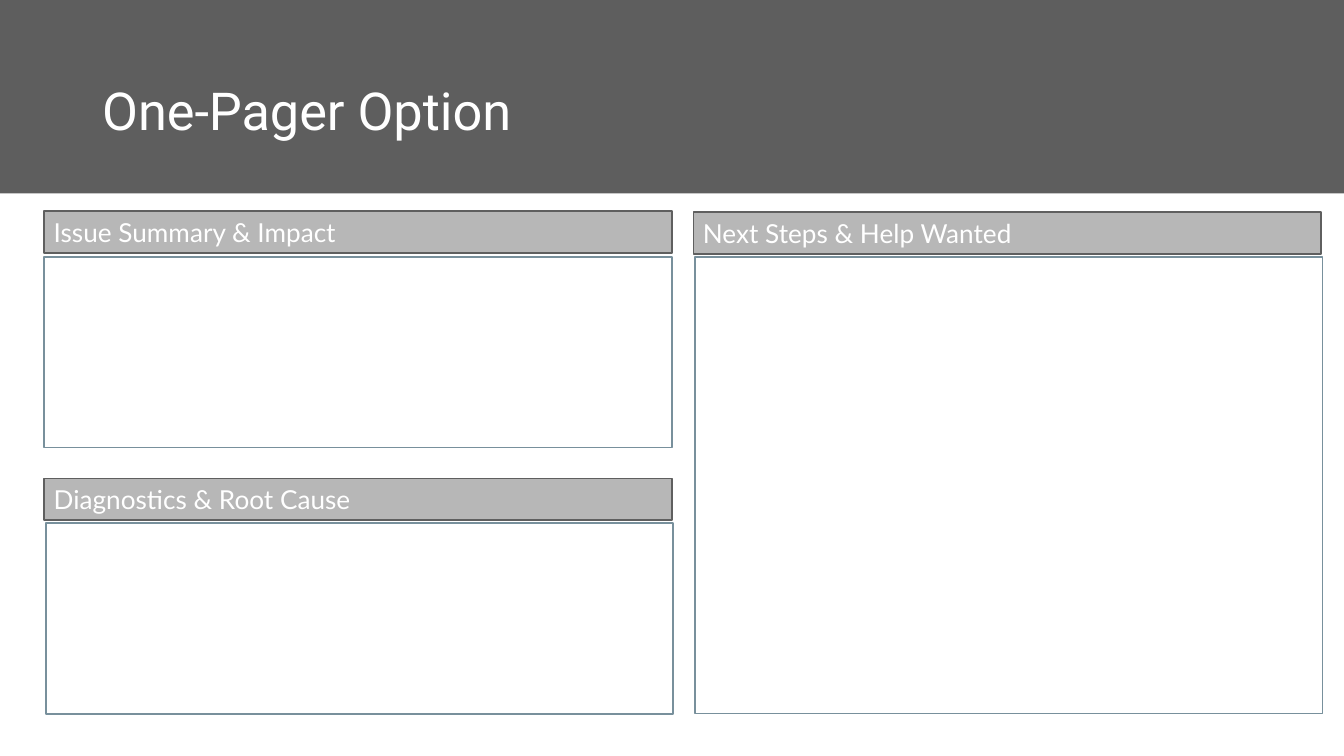
from dataclasses import dataclass

from pptx import Presentation
from pptx.dml.color import RGBColor
from pptx.enum.shapes import MSO_SHAPE
from pptx.enum.text import MSO_ANCHOR, PP_ALIGN
from pptx.util import Inches, Pt

RECT = MSO_SHAPE.RECTANGLE
ROUND_RECT = MSO_SHAPE.ROUNDED_RECTANGLE
MIDDLE = MSO_ANCHOR.MIDDLE
LEFT = PP_ALIGN.LEFT

WIDTH = 10
HEIGHT = WIDTH * 9 / 16
COLUMN_X = (0.33, 5.16)
HEADING_Y = (1.57, 3.56)
BODY_Y = (1.91, 3.89)
PANEL_W = 4.67
HEADING_H = 0.31
BODY_H = 1.42
WHITE = "FFFFFF"


@dataclass(frozen=True)
class Panel:
    heading: str
    column: int
    row: int
    rows: int = 1
    heading_dy: float = 0
    body_dx: float = 0


PANELS = (
    Panel("Issue Summary & Impact", 0, 0),
    Panel("Diagnostics & Root Cause", 0, 1, body_dx=0.01),
    Panel("Next Steps & Help Wanted", 1, 0, rows=2, heading_dy=0.01, body_dx=0.01),
)


def rgb(value: str) -> RGBColor:
    return RGBColor.from_string(value)


def add_box(s, kind, x: float, y: float, w: float, h: float, fill: str, line: str = ""):
    sp = s.shapes.add_shape(kind, Inches(x), Inches(y), Inches(w), Inches(h))
    sp.shadow.inherit = False
    sp.fill.solid()
    sp.fill.fore_color.rgb = rgb(fill)
    if line:
        sp.line.color.rgb = rgb(line)
        sp.line.width = Pt(1)
    else:
        sp.line.fill.background()
    return sp


def write(sp, text: str, *, font: str, size: float, color: str = WHITE, spacing: float = 1):
    tf = sp.text_frame
    tf.word_wrap = True
    tf.vertical_anchor = MIDDLE
    tf.margin_left = tf.margin_right = Inches(0.07)
    tf.margin_top = tf.margin_bottom = Inches(0.04)
    p = tf.paragraphs[0]
    p.alignment = LEFT
    p.line_spacing = spacing
    r = p.add_run()
    r.text = text
    r.font.name = font
    r.font.size = Pt(size)
    r.font.color.rgb = rgb(color)


def add_panel(s, panel: Panel) -> None:
    x = COLUMN_X[panel.column]
    heading = add_box(s, RECT, x, HEADING_Y[panel.row] + panel.heading_dy,
                      PANEL_W, HEADING_H, "B7B7B7", "5F5F5F")
    write(heading, panel.heading, font="Lato", size=14)
    last_row = panel.row + panel.rows - 1
    height = BODY_Y[last_row] + BODY_H - BODY_Y[panel.row]
    body = add_box(s, ROUND_RECT, x + panel.body_dx, BODY_Y[panel.row],
                   PANEL_W, height, WHITE, "78909C")
    body.adjustments[0] = 0


def add_title(s, text: str) -> None:
    title = s.shapes.title
    title.left, title.top = Inches(0.69), Inches(0.3)
    title.width, title.height = Inches(8.62), Inches(1.09)
    write(title, text, font="Roboto", size=28, spacing=0.9)
    s.shapes._spTree.append(title._element)


def main() -> None:
    prs = Presentation()
    prs.slide_width, prs.slide_height = Inches(WIDTH), Inches(HEIGHT)
    s = prs.slides.add_slide(prs.slide_layouts[5])
    add_box(s, RECT, 0, 0, WIDTH, 1.44, "5E5E5E")
    for panel in PANELS:
        add_panel(s, panel)
    add_title(s, "One-Pager Option")
    prs.save("out.pptx")


if __name__ == "__main__":
    main()
